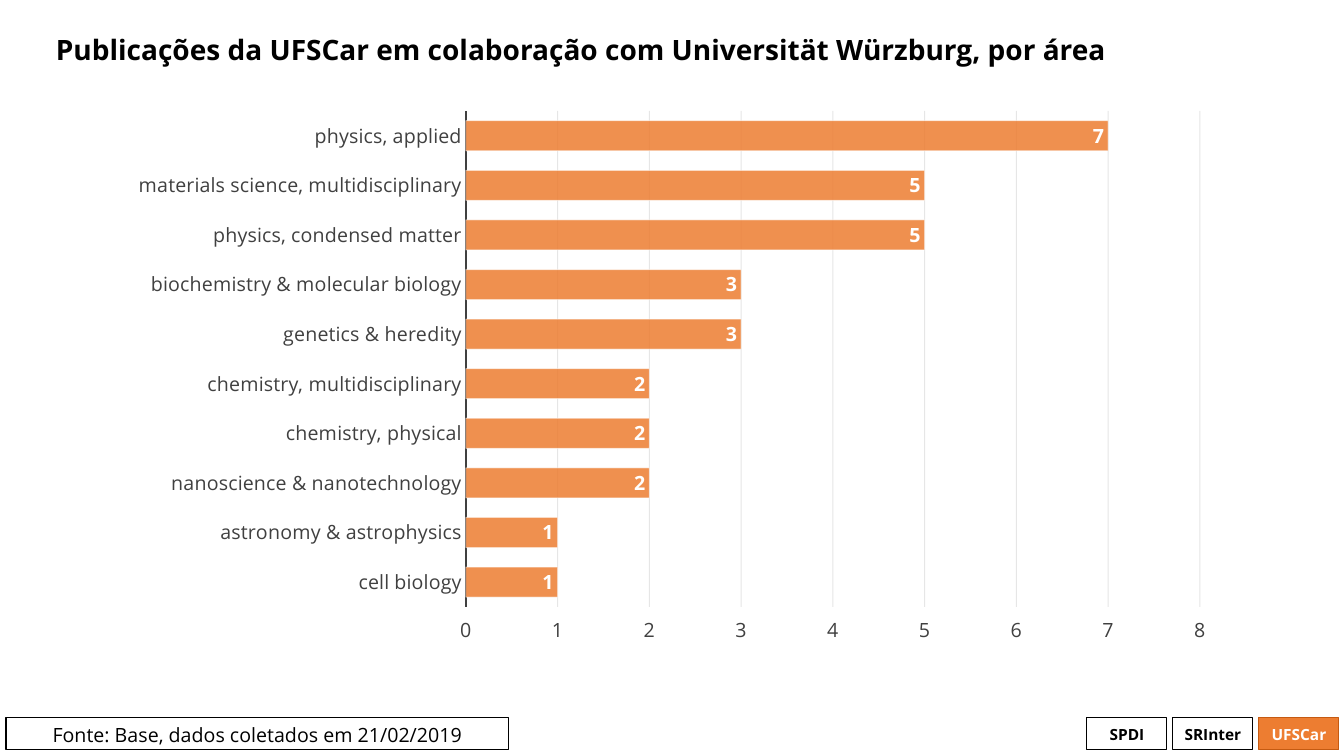
import pptx
import pptx.chart.data
import pptx.dml.color
import pptx.enum.chart
import pptx.enum.shapes
import pptx.enum.text
import pptx.oxml
import pptx.oxml.ns
import pptx.util

WIDE, HIGH = 1344, 756
SCALE = 12192000 / WIDE
FONT = "Open Sans"
COLORS = {
    "black": "000000",
    "white": "FFFFFF",
    "gray": "404040",
    "grid": "0D0D0D",
    "orange": "ED7D31",
    "rust": "C55A11",
}
AREAS = {
    "physics, applied": 7,
    "materials science, multidisciplinary": 5,
    "physics, condensed matter": 5,
    "biochemistry & molecular biology": 3,
    "genetics & heredity": 3,
    "chemistry, multidisciplinary": 2,
    "chemistry, physical": 2,
    "nanoscience & nanotechnology": 2,
    "astronomy & astrophysics": 1,
    "cell biology": 1,
}
FRAME = (116, 100, 1111, 555)
PLOT = (466, 111, 734, 496)


def px(count):
    return pptx.util.Emu(round(count * SCALE))


def color(name):
    return pptx.dml.color.RGBColor.from_string(COLORS[name])


def style(font, size, tint, bold=False):
    font.name = FONT
    font.size = pptx.util.Pt(size)
    font.bold = bold
    font.color.rgb = color(tint)


def paint(fill, tint):
    fill.solid()
    fill.fore_color.rgb = color(tint)


def stroke(line, tint, width):
    line.width = pptx.util.Pt(width)
    paint(line.fill, tint)


def fade(fill, parent, percent):
    for node in parent.findall(fill, parent.nsmap):
        clear = pptx.oxml.parse_xml(
            f'<a:alpha {pptx.oxml.ns.nsdecls("a")} val="{percent * 1000}"/>'
        )
        node.append(clear)


def write(shape, text, size, tint, bold, align, anchor):
    frame = shape.text_frame
    frame.word_wrap = True
    frame.vertical_anchor = anchor
    frame.text = text
    line = frame.paragraphs[0]
    line.alignment = align
    style(line.runs[0].font, size, tint, bold)


def add_box(slide, area, text, size, bold=True, fill=None, edge="black", tint="black",
            anchor=pptx.enum.text.MSO_ANCHOR.MIDDLE):
    box = slide.shapes.add_shape(
        pptx.enum.shapes.MSO_SHAPE.RECTANGLE, *map(px, area)
    )
    box.shadow.inherit = False
    if fill:
        paint(box.fill, fill)
    else:
        box.fill.background()
    stroke(box.line, edge, 0.75)
    write(box, text, size, tint, bold, pptx.enum.text.PP_ALIGN.CENTER, anchor)


def add_title(slide, text):
    box = slide.shapes.add_textbox(*map(px, (46, 5, 1251, 92)))
    write(box, text, 20, "black", True, pptx.enum.text.PP_ALIGN.LEFT,
          pptx.enum.text.MSO_ANCHOR.MIDDLE)
    box.text_frame.paragraphs[0].line_spacing = 0.9


def place_plot(chart):
    left, top, wide, high = FRAME
    parts = {
        "x": (PLOT[0] - left) / wide,
        "y": (PLOT[1] - top) / high,
        "w": PLOT[2] / wide,
        "h": PLOT[3] / high,
    }
    modes = '<c:xMode val="edge"/><c:yMode val="edge"/>'
    sizes = "".join(f'<c:{key} val="{part:.4f}"/>' for key, part in parts.items())
    layout = pptx.oxml.parse_xml(
        f'<c:layout {pptx.oxml.ns.nsdecls("c")}><c:manualLayout>'
        f'<c:layoutTarget val="inner"/>{modes}{sizes}</c:manualLayout></c:layout>'
    )
    area = chart.plots[0]._element.getparent()
    for old in area.findall(pptx.oxml.ns.qn("c:layout")):
        area.remove(old)
    area.insert(0, layout)


def style_axes(chart):
    kinds = pptx.enum.chart
    cats, vals = chart.category_axis, chart.value_axis
    for axis in (cats, vals):
        axis.major_tick_mark = kinds.XL_TICK_MARK.NONE
        axis.minor_tick_mark = kinds.XL_TICK_MARK.NONE
        style(axis.tick_labels.font, 14, "gray")
    cats.reverse_order = True
    cats.has_major_gridlines = False
    stroke(cats.format.line, "gray", 1.5)
    vals.tick_label_position = kinds.XL_TICK_LABEL_POSITION.HIGH
    vals.minimum_scale, vals.maximum_scale, vals.major_unit = 0, 8, 1
    vals.format.line.fill.background()
    vals.has_major_gridlines = True
    stroke(vals.major_gridlines.format.line, "grid", 0.75)
    grid = vals._element.find(pptx.oxml.ns.qn("c:majorGridlines"))
    fade(".//a:srgbClr", grid, 10)


def style_bars(plot):
    plot.gap_width = 65
    plot.vary_by_categories = False
    bars = plot.series[0]
    paint(bars.format.fill, "orange")
    stroke(bars.format.line, "white", 0.75)
    shape = bars._element.find(pptx.oxml.ns.qn("c:spPr"))
    fade("./a:solidFill/a:srgbClr", shape, 85)
    fade("./a:ln/a:solidFill/a:srgbClr", shape, 50)
    labels = bars.data_labels
    labels.show_value = True
    labels.position = pptx.enum.chart.XL_LABEL_POSITION.INSIDE_END
    style(labels.font, 14, "white", True)


def add_bars(slide):
    data = pptx.chart.data.CategoryChartData()
    data.categories = list(AREAS)
    data.add_series("Series 1", list(AREAS.values()))
    chart = slide.shapes.add_chart(
        pptx.enum.chart.XL_CHART_TYPE.BAR_CLUSTERED, *map(px, FRAME), data
    ).chart
    chart.has_legend = False
    chart.has_title = False
    style(chart.font, 14, "black")
    place_plot(chart)
    style_axes(chart)
    style_bars(chart.plots[0])


def main():
    deck = pptx.Presentation()
    deck.slide_width, deck.slide_height = px(WIDE), px(HIGH)
    slide = deck.slides.add_slide(deck.slide_layouts[6])
    tags = (
        ("SPDI", {}),
        ("SRInter", {}),
        ("UFSCar", {"fill": "orange", "edge": "rust", "tint": "white"}),
    )
    for index, (text, look) in enumerate(tags):
        add_box(slide, (1087 + 86 * index, 718, 80, 32), text, 11, **look)
    add_box(slide, (6, 718, 503, 32), "Fonte: Base, dados coletados em 21/02/2019", 14,
            bold=False, anchor=pptx.enum.text.MSO_ANCHOR.TOP)
    add_title(slide, "Publicações da UFSCar em colaboração com Universität Würzburg, por área")
    add_bars(slide)
    deck.save("out.pptx")


if __name__ == "__main__":
    main()
